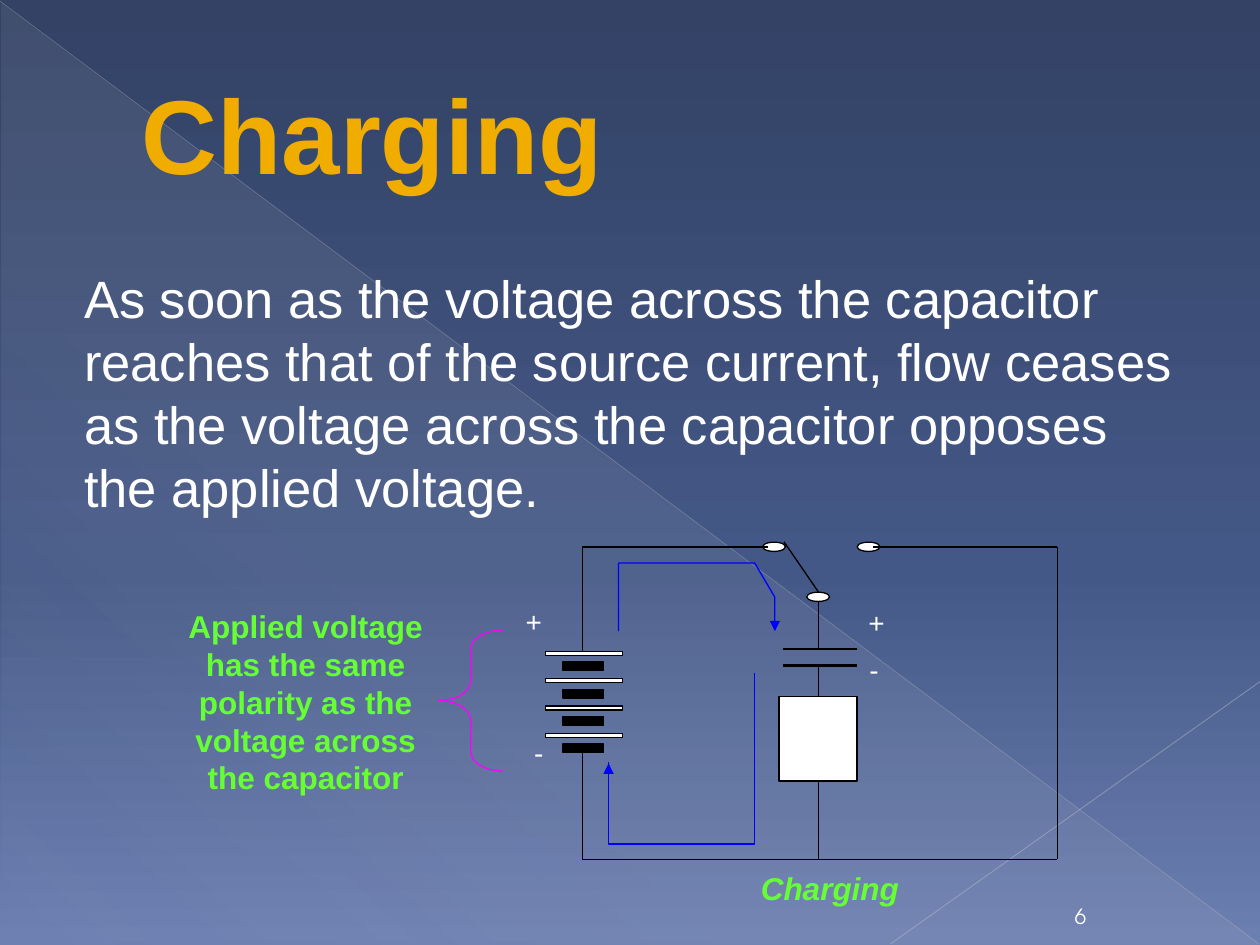
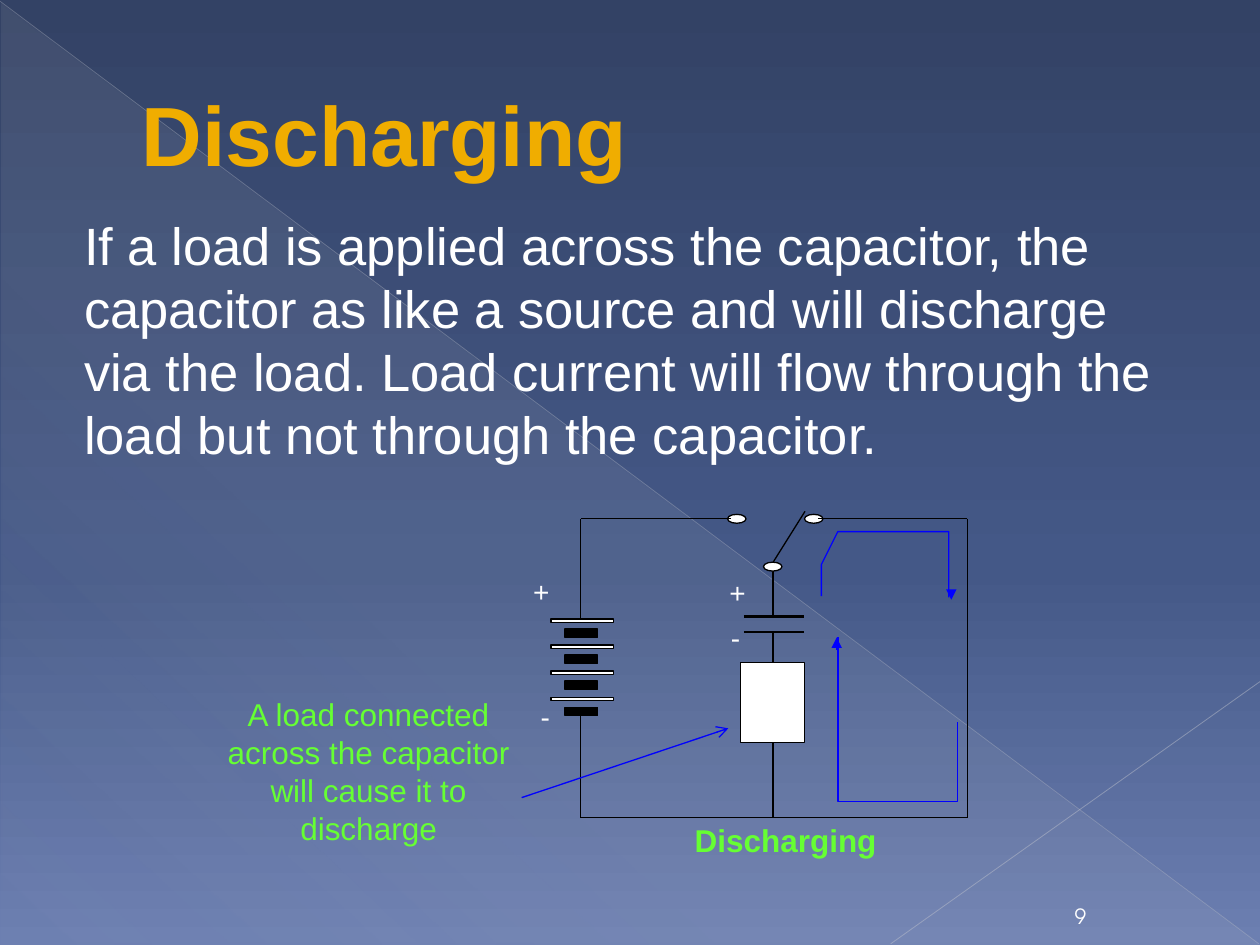
from lxml import etree
from pptx import Presentation
from pptx.dml.color import RGBColor
from pptx.enum.shapes import MSO_CONNECTOR, MSO_SHAPE
from pptx.enum.text import MSO_ANCHOR, PP_ALIGN
from pptx.oxml.ns import qn
from pptx.util import Pt

LINE = MSO_CONNECTOR.STRAIGHT
RECT, OVAL = MSO_SHAPE.RECTANGLE, MSO_SHAPE.OVAL
WEDGE, BRACE = MSO_SHAPE.RIGHT_TRIANGLE, MSO_SHAPE.LEFT_BRACE
LEFT, MID = PP_ALIGN.LEFT, PP_ALIGN.CENTER
TOP, CENTER, BOTTOM = MSO_ANCHOR.TOP, MSO_ANCHOR.MIDDLE, MSO_ANCHOR.BOTTOM

WHITE, BLACK, BLUE = "FFFFFF", "000000", "0000FF"
GOLD, GREEN, PINK, MIST = "F0AD00", "66FF33", "FF00FF", "D4D4D6"
SKY = [(0, "334265", 100), (60, "445887", 100), (100, "6C7FB1", 100)]
HAZE = [(0, MIST, 10), (70, MIST, 8), (100, MIST, 1)]


def hue(code):
    return RGBColor.from_string(code)


def fade(node, alpha):
    """Set the opacity, in percent, of a colour element."""
    etree.SubElement(node, qn("a:alpha"), val=str(alpha * 1000))


def shade(fill, owner, stops, angle):
    """Fill with a linear gradient of (place, colour, opacity) stops."""
    fill.gradient()
    grad = next(owner.iter(qn("a:gradFill")))
    grad.find(qn("a:lin")).set("ang", str(angle * 60000))
    rows = grad.find(qn("a:gsLst"))
    rows.clear()
    for place, code, alpha in stops:
        stop = etree.SubElement(rows, qn("a:gs"), pos=str(place * 1000))
        fade(etree.SubElement(stop, qn("a:srgbClr"), val=code), alpha)


def text(slide, words, x, y, w, h, size=18, color=WHITE, font="Arial", bold=False,
         slant=False, align=LEFT, anchor=TOP, wrap=True, indent=0):
    frame = slide.shapes.add_textbox(Pt(x), Pt(y), Pt(w), Pt(h)).text_frame
    frame.word_wrap = wrap
    frame.vertical_anchor = anchor
    frame.text = words
    for para in frame.paragraphs:
        para.alignment = align
        para._p.get_or_add_pPr().set("marL", str(Pt(indent)))
        face = para.font
        face.name, face.size = font, Pt(size)
        face.bold, face.italic = bold, slant
        face.color.rgb = hue(color)


def line(slide, x1, y1, x2, y2, color=BLACK, width=0.75, tip=None, alpha=100):
    wire = slide.shapes.add_connector(LINE, Pt(x1), Pt(y1), Pt(x2), Pt(y2))
    wire.line.color.rgb = hue(color)
    wire.line.width = Pt(width)
    props = wire._element.spPr
    if alpha < 100:
        fade(next(props.iter(qn("a:srgbClr"))), alpha)
    if tip:
        etree.SubElement(props.find(qn("a:ln")), qn("a:tailEnd"), type=tip)
    etree.SubElement(props, qn("a:effectLst"))


def shape(slide, kind, x, y, w, h, fill=None, edge=BLACK):
    item = slide.shapes.add_shape(kind, Pt(x), Pt(y), Pt(w), Pt(h))
    item.shadow.inherit = False
    if fill:
        item.fill.solid()
        item.fill.fore_color.rgb = hue(fill)
    else:
        item.fill.background()
    if edge:
        item.line.color.rgb = hue(edge)
        item.line.width = Pt(0.75)
    else:
        item.line.fill.background()
    return item


def flow(slide, points, start, end):
    """Draw a blue current path and its arrowhead."""
    first, *rest = [(Pt(x), Pt(y)) for x, y in points]
    pen = slide.shapes.build_freeform(*first)
    pen.add_line_segments(rest, close=False)
    path = pen.convert_to_shape()
    path.shadow.inherit = False
    path.fill.background()
    path.line.color.rgb = hue(BLUE)
    path.line.width = Pt(0.75)
    line(slide, *start, *end, color=BLUE, tip="triangle")


def base(deck, title, size, body, top, number):
    """Add a slide with the backdrop, title, body text and number."""
    slide = deck.slides.add_slide(deck.slide_layouts[6])
    shade(slide.background.fill, slide._element, SKY, 90)
    wedge = shape(slide, WEDGE, 0.7, 1.4, 719.3, 538.6, edge=None)
    shade(wedge.fill, wedge._element, HAZE, 133)
    line(slide, 0, 0.7, 719.3, 539.3, color="B9BDC8", width=0.39, alpha=35)
    line(slide, 720, 389.5, 509, 539.3, color="C1C4CE", width=0.47, alpha=45)
    text(slide, title, 36, 20.9, 648, 110.2, size=size, color=GOLD, bold=True,
         anchor=CENTER, indent=38)
    text(slide, body, 36, top, 648, 508.3 - top, size=30, indent=5)
    text(slide, number, 597.6, 510.5, 39.6, 23.8, size=12, font="TeX Gyre Adventor",
         align=MID, anchor=BOTTOM)
    return slide


def plan(slide, left, top, wide, high, arm, sign):
    """Draw the circuit from its top left corner, scaled by wide and high.

    arm is the tip of the switch, sign the left of the capacitor's labels.
    """
    right, low, stem = 271.4, 178.6, 135

    def wire(x1, y1, x2, y2, width=0.75):
        line(slide, left + x1 * wide, top + y1 * high,
             left + x2 * wide, top + y2 * high, width=width)

    def part(kind, x, y, w, h, fill=WHITE):
        shape(slide, kind, left + x * wide, top + y * high, w * wide, h * high, fill)

    def label(words, x, y):
        text(slide, words, left + x * wide, top + y * high, 55.4 * wide, 33 * high,
             size=16, align=MID)

    wire(stem, 85.7, stem, 67.7, 1)
    wire(stem, 58.3, stem, 28.8, 1)
    for y in (58.3, 67.7):
        wire(114.5, y, 157, y, 1.5)
    part(RECT, 112.3, 85.7, 44.6, 48.2)
    wire(stem, 133.9, stem, low)
    wire(0, low, right, low)
    wire(right, low, right, 0)
    for x, y in ((157, -2.7), (103, -2.7), (128.2, 25.9)):
        part(OVAL, x, y, 13, 5.3)
    wire(right, 0, 166.3, 0)
    wire(0, 0, 105.8, 0)
    wire(stem, 25.9, *arm)
    for cell in range(4):
        y = 59.8 + cell * 15.6
        part(RECT, -21, y, 44, 2.2)
        part(RECT, -11, y + 6, 23, 5, BLACK)
    wire(0, 59.8, 0, 0)
    wire(0, low, 0, 114.5)
    label("+", -55.4, 29.5)
    label("-", -52.6, 104.4)
    label("+", sign, 30.2)
    label("-", sign - 1.5, 56.9)


def charge(deck):
    slide = base(deck, "Charging", 60,
                 "As soon as the voltage across the capacitor reaches that of the source "
                 "current, flow ceases as the voltage across the capacitor opposes the "
                 "applied voltage.", 148.3, "6")
    plan(slide, 332.8, 312.5, 1, 1, arm=(115.2, -2.9), sign=140.4)
    flow(slide, [(353.5, 360.7), (353.5, 321.8), (431.3, 321.8), (442.8, 341.3),
                 (442.8, 360)], (442.8, 355.7), (442.8, 360.7))
    flow(slide, [(431.3, 384.5), (431.3, 482.4), (347.8, 482.4), (347.8, 435.6)],
         (347.8, 444.2), (347.8, 436.3))
    brace = shape(slide, BRACE, 250.6, 360, 36.7, 80.6, edge=PINK)
    brace.adjustments[0] = 0.304
    text(slide, "Charging", 427.7, 493.2, 93.6, 28, color=GREEN, bold=True,
         slant=True, wrap=False)
    text(slide, "Applied voltage has the same polarity as the voltage across\n"
         "the capacitor", 95.8, 343.4, 157.7, 133.2, color=GREEN, bold=True, align=MID)


def drain(deck):
    slide = base(deck, "Discharging", 48,
                 "If a load is applied across the capacitor, the capacitor as like a "
                 "source and will discharge via the load. Load current will flow through "
                 "the load but not through the capacitor.", 118.1, "9")
    plan(slide, 331.9, 296.5, 0.814, 0.956, arm=(157.4, -4.5), sign=82.3)
    text(slide, "Discharging", 353.5, 465.8, 190.8, 25.9, color=GREEN, bold=True,
         align=MID)
    flow(slide, [(542.2, 341.3), (542.2, 303.8), (478.8, 303.8), (469.4, 322.6),
                 (469.4, 340.6)], (543.6, 337.7), (543.6, 342.7))
    flow(slide, [(478.8, 364.3), (478.8, 457.9), (547.2, 457.9), (547.2, 412.6)],
         (478.1, 371.5), (478.1, 364.3))
    text(slide, "A load connected across the capacitor will cause it to discharge",
         112.3, 393.8, 196.6, 133.2, color=GREEN, align=MID)
    line(slide, 298.1, 455.8, 416.2, 416.2, color=BLUE, tip="arrow")


def main():
    deck = Presentation()
    deck.slide_width, deck.slide_height = Pt(720), Pt(540)
    charge(deck)
    drain(deck)
    deck.save("out.pptx")


if __name__ == "__main__":
    main()
